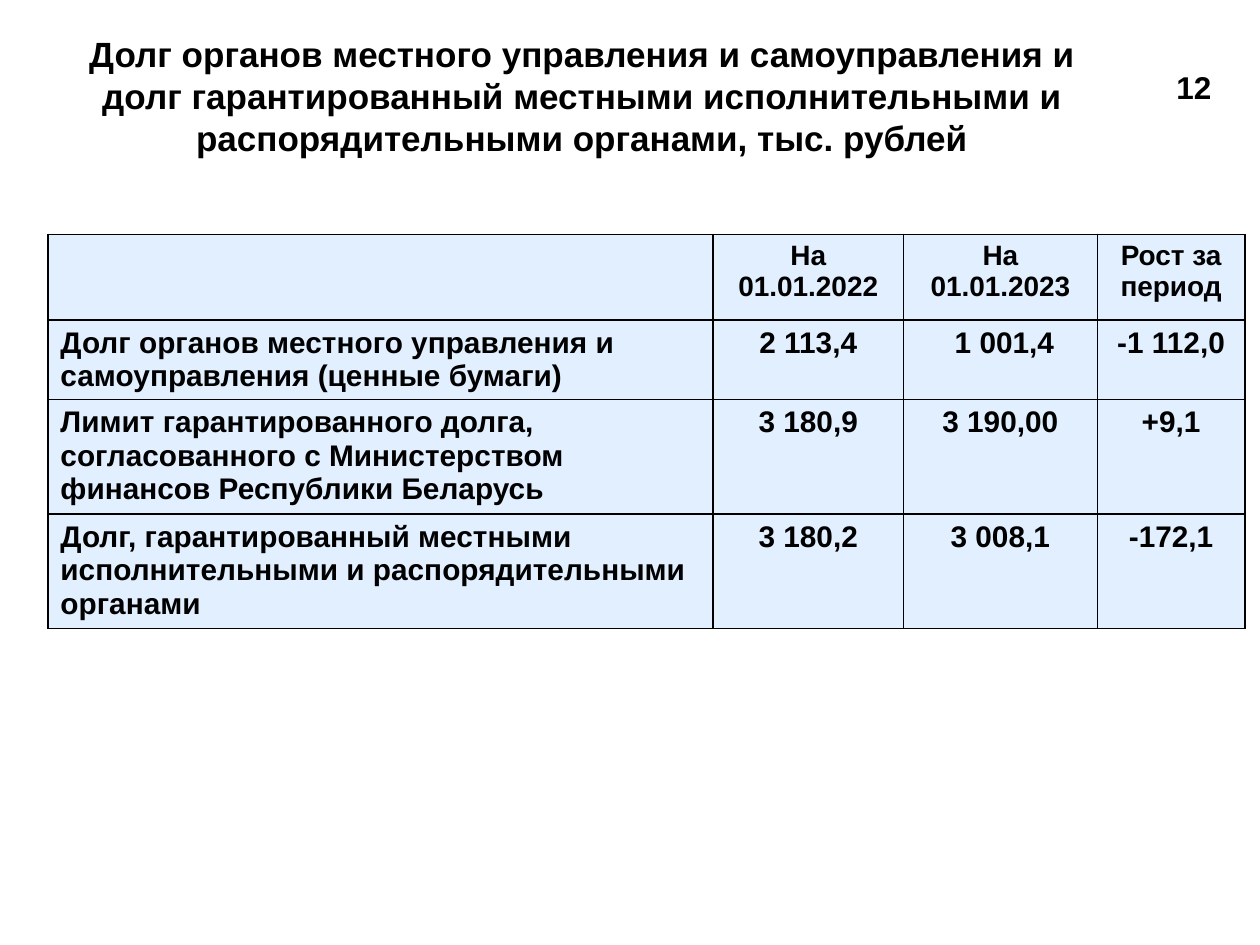
from lxml import etree
from pptx import Presentation
from pptx.dml.color import RGBColor
from pptx.enum.text import MSO_ANCHOR, MSO_AUTO_SIZE, PP_ALIGN
from pptx.oxml.ns import qn
from pptx.util import Inches, Pt

LEFT, CENTER = PP_ALIGN.LEFT, PP_ALIGN.CENTER
MIDDLE = MSO_ANCHOR.MIDDLE
GROW, FIXED = MSO_AUTO_SIZE.SHAPE_TO_FIT_TEXT, MSO_AUTO_SIZE.NONE
INK, PALE = "000000", "E1EFFF"
SIDES = ("a:lnL", "a:lnR", "a:lnT", "a:lnB")

TITLE = (
    "Долг органов местного управления и самоуправления и долг гарантированный "
    "местными исполнительными и распорядительными органами, тыс. рублей"
)
ROWS = [
    ("", "На 01.01.2022", "На 01.01.2023", "Рост за период"),
    ("Долг органов местного управления и самоуправления (ценные бумаги)",
     "2 113,4", " 1 001,4", "-1 112,0"),
    ("Лимит гарантированного долга, согласованного с Министерством финансов "
     "Республики Беларусь", "3 180,9", "3 190,00", "+9,1"),
    ("Долг, гарантированный местными исполнительными и распорядительными органами",
     "3 180,2", "3 008,1", "-172,1"),
]
WIDTHS = (5.28, 1.51, 1.54, 1.17)
HEIGHTS = (0.68, 0.63, 0.91, 0.91)


def color(code):
    return RGBColor.from_string(code)


class Deck:
    """Holds the type style and the current slide of the debt report."""

    def __init__(self, show):
        self.style = {"name": "Arial", "bold": True}
        self.slide = show.slides.add_slide(show.slide_layouts[5])

    def put_text(self, frame, text, size, align=CENTER):
        para = frame.paragraphs[0]
        para.text = text
        para.alignment = align
        for key, value in {**self.style, "size": Pt(size)}.items():
            setattr(para.font, key, value)
        para.font.color.rgb = color(INK)

    def title(self, text, size, left, top, width, height):
        shape = self.slide.shapes.title
        place = {"left": left, "top": top, "width": width, "height": height}
        for key, value in place.items():
            setattr(shape, key, Inches(value))
        shape.text_frame.auto_size = FIXED
        shape.text_frame.vertical_anchor = MIDDLE
        self.put_text(shape.text_frame, text, size)

    def label(self, text, size, *place):
        box = self.slide.shapes.add_textbox(*map(Inches, place))
        box.text_frame.word_wrap = True
        box.text_frame.auto_size = GROW
        self.put_text(box.text_frame, text, size)

    def border(self, cell):
        props = cell._tc.get_or_add_tcPr()
        for spot, side in enumerate(SIDES):
            line = etree.Element(qn(side), w=str(Pt(1)))
            fill = etree.SubElement(line, qn("a:solidFill"))
            etree.SubElement(fill, qn("a:srgbClr"), val=INK)
            props.insert(spot, line)

    def table(self, rows, widths, heights, left, top):
        place = map(Inches, (left, top, sum(widths), sum(heights)))
        grid = self.slide.shapes.add_table(len(rows), len(widths), *place).table
        for col, width in zip(grid.columns, widths):
            col.width = Inches(width)
        for row, height in zip(grid.rows, heights):
            row.height = Inches(height)
        for i, row in enumerate(rows):
            for j, text in enumerate(row):
                cell = grid.cell(i, j)
                cell.fill.solid()
                cell.fill.fore_color.rgb = color(PALE)
                self.border(cell)
                self.put_text(cell.text_frame, text, 17 if i else 16,
                              CENTER if j else LEFT)


def main():
    show = Presentation()
    show.slide_width, show.slide_height = Inches(10), Inches(7.5)
    deck = Deck(show)
    deck.title(TITLE, 20, 0.38, 0.21, 8.48, 1.1)
    deck.table(ROWS, WIDTHS, HEIGHTS, 0.38, 1.86)
    deck.label("12", 18, 9.09, 0.49, 0.77, 0.4)
    show.save("out.pptx")


if __name__ == "__main__":
    main()
